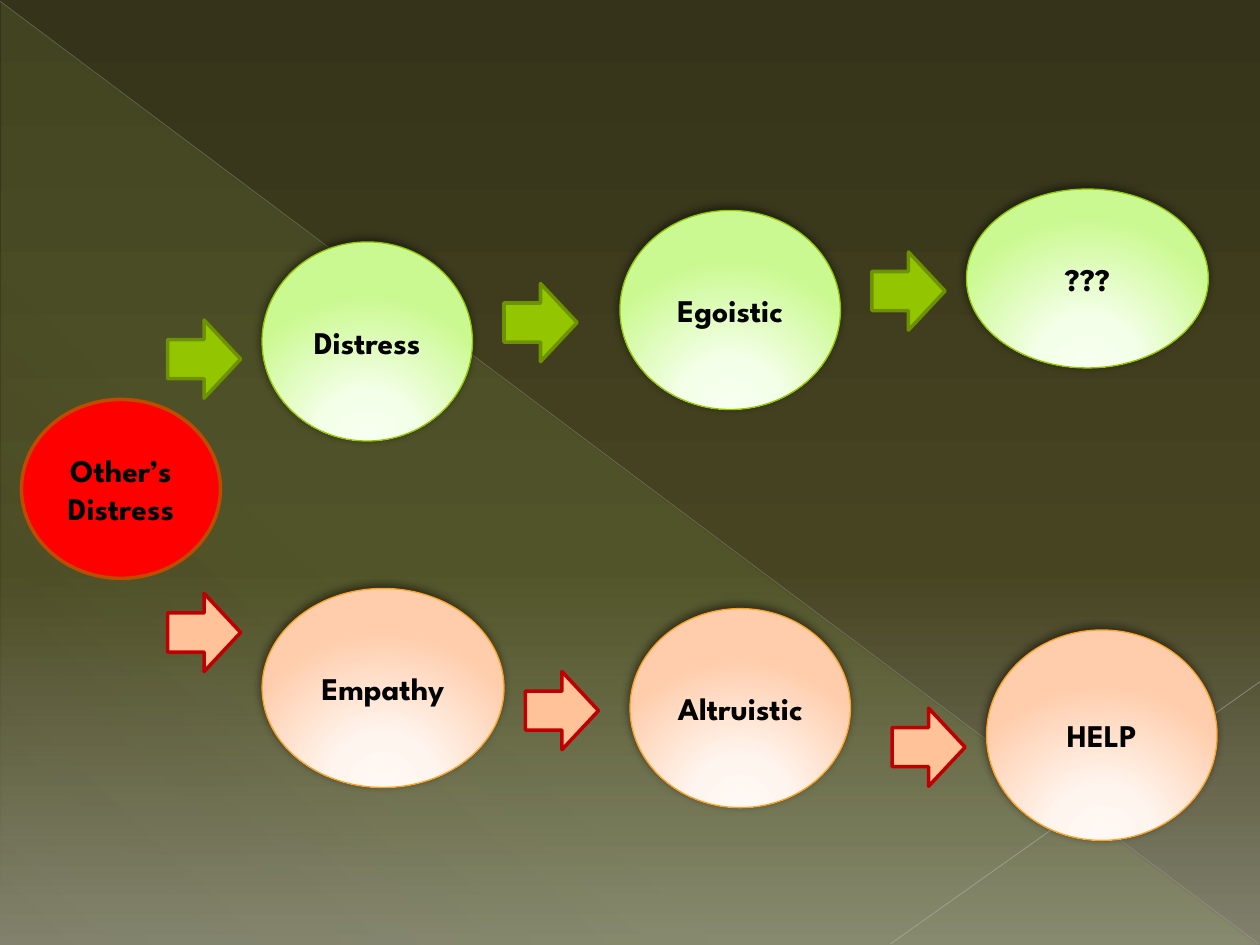
from dataclasses import dataclass
from typing import Any

import pptx
import pptx.dml.color
import pptx.enum.shapes
import pptx.enum.text
import pptx.oxml
import pptx.oxml.ns
import pptx.util

Inches = pptx.util.Inches
Pt = pptx.util.Pt
Shape = pptx.enum.shapes.MSO_SHAPE

COLORS = {
    "top": "353319", "middle": "464421", "bottom": "81806D",
    "glow": "CAF278", "diagonal": "B9B9B5", "corner": "C1C0BD",
    "text": "000000", "red": "FF0000", "rust": "BD4C00",
    "green": "94C600", "dark_green": "6D9200",
    "green_core": "F7FFEF", "green_inner": "F4FFE9", "green_rim": "CBF991",
    "orange": "FFA021", "peach": "FFC299", "dark_red": "C00000",
    "peach_core": "FFF8F4", "peach_inner": "FFF5EF", "peach_rim": "FFCDAC",
}
TEXT_FORMAT = {"name": "League Spartan", "size": Pt(18), "bold": True}
FRAME_FORMAT = {"word_wrap": True, "vertical_anchor": pptx.enum.text.MSO_ANCHOR.MIDDLE}
RADIAL = '<a:path path="circle"><a:fillToRect l="50000" t="155000" r="50000" b="-55000"/></a:path>'
NAMESPACE = pptx.oxml.ns.nsdecls("a")


@dataclass
class Bubble:
    text: str
    left: float
    top: float
    width: float
    height: float


@dataclass
class Lane:
    gradient: list[tuple[int, str, int]]
    outline: str
    arrow_fill: str
    arrow_line: str
    bubbles: list[Bubble]
    arrows: list[tuple[float, float]]


@dataclass
class Ray:
    start: tuple[float, float]
    end: tuple[float, float]
    color: str
    width: float
    opacity: int


LANES = [
    Lane([(0, "green_core", 100), (34, "green_inner", 100), (100, "green_rim", 100)],
         "green", "green", "dark_green",
         [Bubble("Distress", 2.08, 1.92, 1.67, 1.58),
          Bubble("Egoistic", 4.92, 1.67, 1.75, 1.58),
          Bubble("???", 7.67, 1.5, 1.92, 1.42)],
         [(1.33, 2.54), (4, 2.25), (6.92, 2)]),
    Lane([(0, "peach_core", 100), (34, "peach_inner", 100), (100, "peach_rim", 100)],
         "orange", "peach", "dark_red",
         [Bubble("Empathy", 2.08, 4.67, 1.92, 1.58),
          Bubble("Altruistic", 5, 4.83, 1.75, 1.58),
          Bubble("HELP", 7.83, 5, 1.83, 1.67)],
         [(1.33, 4.71), (4.17, 5.33), (7.08, 5.62)]),
]
RAYS = [
    Ray((0, 0.01), (9.99, 7.49), "diagonal", 0.39, 35),
    Ray((10, 5.41), (7.07, 7.49), "corner", 0.47, 45),
]


def rgb(name: str) -> pptx.dml.color.RGBColor:
    return pptx.dml.color.RGBColor.from_string(COLORS[name])


def linear(angle: int) -> str:
    return f'<a:lin ang="{angle * 60000}" scaled="0"/>'


def set_gradient(owner: Any, element: Any, stops: list[tuple[int, str, int]], direction: str) -> None:
    owner.fill.solid()
    owner.fill.fore_color.rgb = rgb("text")
    solid = element.xpath(".//a:solidFill[parent::p:spPr or parent::p:bgPr]")[0]
    stop_xml = "".join(
        f'<a:gs pos="{position * 1000}"><a:srgbClr val="{COLORS[color]}">'
        f'<a:alpha val="{opacity * 1000}"/></a:srgbClr></a:gs>'
        for position, color, opacity in stops)
    gradient = pptx.oxml.parse_xml(
        f'<a:gradFill {NAMESPACE} rotWithShape="1"><a:gsLst>{stop_xml}</a:gsLst>{direction}</a:gradFill>')
    solid.getparent().replace(solid, gradient)


def add_shape(page: Any, kind: Any, left: float, top: float, width: float, height: float) -> Any:
    shape = page.shapes.add_shape(kind, Inches(left), Inches(top), Inches(width), Inches(height))
    shape.shadow.inherit = False
    return shape


def set_line(shape: Any, color: str, width: float) -> None:
    shape.line.color.rgb = rgb(color)
    shape.line.width = Pt(width)


def add_bubble(page: Any, bubble: Bubble, outline: str, width: float) -> Any:
    shape = add_shape(page, Shape.OVAL, bubble.left, bubble.top, bubble.width, bubble.height)
    set_line(shape, outline, width)
    for name, value in FRAME_FORMAT.items():
        setattr(shape.text_frame, name, value)
    para = shape.text_frame.paragraphs[0]
    para.alignment = pptx.enum.text.PP_ALIGN.CENTER
    span = para.add_run()
    span.text = bubble.text
    span.font.color.rgb = rgb("text")
    for name, value in TEXT_FORMAT.items():
        setattr(span.font, name, value)
    return shape


def add_shadow(shape: Any) -> None:
    effects = shape.element.spPr.find(pptx.oxml.ns.qn("a:effectLst"))
    effects.append(pptx.oxml.parse_xml(
        f'<a:outerShdw {NAMESPACE} blurRad="{Pt(5)}" dist="{Pt(2)}" dir="{245 * 60000}" rotWithShape="0">'
        f'<a:srgbClr val="{COLORS["text"]}"><a:alpha val="50000"/></a:srgbClr></a:outerShdw>'))


def add_arrow(page: Any, left: float, top: float, lane: Lane) -> None:
    arrow = add_shape(page, Shape.RIGHT_ARROW, left, top, 0.58, 0.62)
    arrow.fill.solid()
    arrow.fill.fore_color.rgb = rgb(lane.arrow_fill)
    set_line(arrow, lane.arrow_line, 2)


def add_ray(page: Any, ray: Ray) -> None:
    points = [Inches(value) for value in ray.start + ray.end]
    line = page.shapes.add_connector(pptx.enum.shapes.MSO_CONNECTOR.STRAIGHT, *points)
    set_line(line, ray.color, ray.width)
    properties = line.element.spPr
    properties.xpath("a:ln//a:srgbClr")[0].append(
        pptx.oxml.parse_xml(f'<a:alpha {NAMESPACE} val="{ray.opacity * 1000}"/>'))
    properties.append(pptx.oxml.parse_xml(f"<a:effectLst {NAMESPACE}/>"))


def add_backdrop(page: Any) -> None:
    set_gradient(page.background, page.element,
                 [(0, "top", 100), (60, "middle", 100), (100, "bottom", 100)], linear(90))
    triangle = add_shape(page, Shape.RIGHT_TRIANGLE, 0.01, 0.02, 9.98, 7.48)
    set_gradient(triangle, triangle.element,
                 [(0, "glow", 10), (70, "glow", 8), (100, "glow", 1)], linear(133))
    triangle.line.fill.background()
    for ray in RAYS:
        add_ray(page, ray)


def main() -> None:
    deck = pptx.Presentation()
    deck.slide_width, deck.slide_height = Inches(10), Inches(7.5)
    page = deck.slides.add_slide(deck.slide_layouts[6])
    add_backdrop(page)
    source = add_bubble(page, Bubble("Other’s Distress", 0.17, 3.17, 1.58, 1.42), "rust", 2)
    source.fill.solid()
    source.fill.fore_color.rgb = rgb("red")
    for lane in LANES:
        for bubble in lane.bubbles:
            shape = add_bubble(page, bubble, lane.outline, 0.75)
            set_gradient(shape, shape.element, lane.gradient, RADIAL)
            add_shadow(shape)
        for left, top in lane.arrows:
            add_arrow(page, left, top, lane)
    deck.save("out.pptx")


if __name__ == "__main__":
    main()
